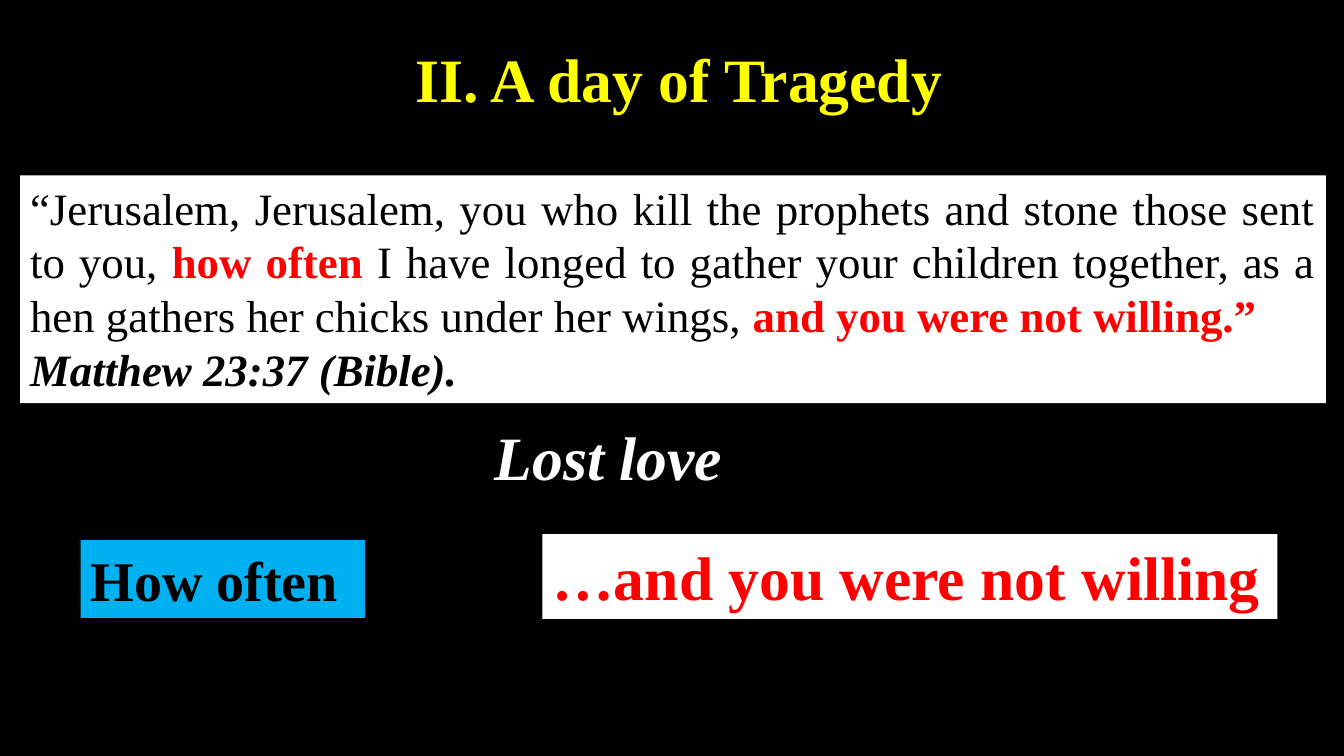
from dataclasses import dataclass
from pptx import Presentation
from pptx.dml.color import RGBColor
from pptx.enum.shapes import MSO_SHAPE
from pptx.enum.text import MSO_ANCHOR, MSO_AUTO_SIZE, PP_ALIGN
from pptx.util import Inches, Pt


@dataclass(frozen=True)
class Theme:
    font: str = "Times New Roman"
    black: RGBColor = RGBColor(0, 0, 0)
    white: RGBColor = RGBColor(255, 255, 255)
    yellow: RGBColor = RGBColor(255, 255, 0)
    red: RGBColor = RGBColor(255, 0, 0)
    blue: RGBColor = RGBColor(0, 176, 240)
    head: int = 44
    label: int = 40
    body: int = 32


THEME = Theme()


def style(font, size, color, bold=True, italic=False):
    font.name = THEME.font
    font.size = Pt(size)
    font.color.rgb = color
    font.bold = bold
    font.italic = italic


def setup(frame):
    frame.word_wrap = True
    frame.auto_size = MSO_AUTO_SIZE.NONE
    frame.vertical_anchor = MSO_ANCHOR.TOP
    return frame


def write(frame, text, size, color, italic=False):
    para = setup(frame).paragraphs[0]
    para.text = text
    para.alignment = PP_ALIGN.LEFT
    style(para.font, size, color, italic=italic)


def add_title(slide, text, box):
    title = slide.shapes.title
    title.left, title.top, title.width, title.height = map(Inches, box)
    write(title.text_frame, text, THEME.head, THEME.yellow)


def add_text(slide, text, box, size, color, italic=False):
    label = slide.shapes.add_textbox(*map(Inches, box))
    write(label.text_frame, text, size, color, italic)


def add_panel(slide, box, fill):
    panel = slide.shapes.add_shape(MSO_SHAPE.RECTANGLE, *map(Inches, box))
    panel.shadow.inherit = False
    panel.fill.solid()
    panel.fill.fore_color.rgb = fill
    panel.line.fill.background()
    return panel.text_frame


def add_verse(slide, parts, source, box):
    frame = setup(add_panel(slide, box, THEME.white))
    verse = frame.paragraphs[0]
    verse.alignment = PP_ALIGN.JUSTIFY
    for text, strong in parts:
        run = verse.add_run()
        run.text = text
        style(run.font, THEME.body, THEME.red if strong else THEME.black, strong)
    para = frame.add_paragraph()
    para.text = source
    para.alignment = PP_ALIGN.LEFT
    style(para.font, THEME.body, THEME.black, italic=True)


def main():
    deck = Presentation()
    deck.slide_width, deck.slide_height = Inches(13.33), Inches(7.5)
    slide = deck.slides.add_slide(deck.slide_layouts[5])
    slide.background.fill.solid()
    slide.background.fill.fore_color.rgb = THEME.black

    # Heading
    add_title(slide, "II. A day of Tragedy", (4.02, 0.36, 5.63, 0.84))

    # Bible verse with stressed phrases
    parts = [
        ("“Jerusalem, Jerusalem, you who kill the prophets and stone those sent to you, ", False),
        ("how often ", True),
        ("I have longed to gather your children together, as a hen gathers "
         "her chicks under her wings, ", False),
        ("and you were not willing.” ", True),
    ]
    add_verse(slide, parts, "Matthew 23:37 (Bible).", (0.2, 1.74, 12.95, 2.26))

    # Theme and its two phrases
    add_text(slide, "Lost love", (4.81, 4.11, 2.64, 0.84), THEME.head, THEME.white, italic=True)
    often = add_panel(slide, (0.8, 5.36, 2.82, 0.77), THEME.blue)
    write(often, "How often", THEME.label, THEME.black)
    refusal = add_panel(slide, (5.38, 5.3, 7.29, 0.84), THEME.white)
    write(refusal, "…and you were not willing", THEME.head, THEME.red)

    deck.save("out.pptx")


if __name__ == "__main__":
    main()
